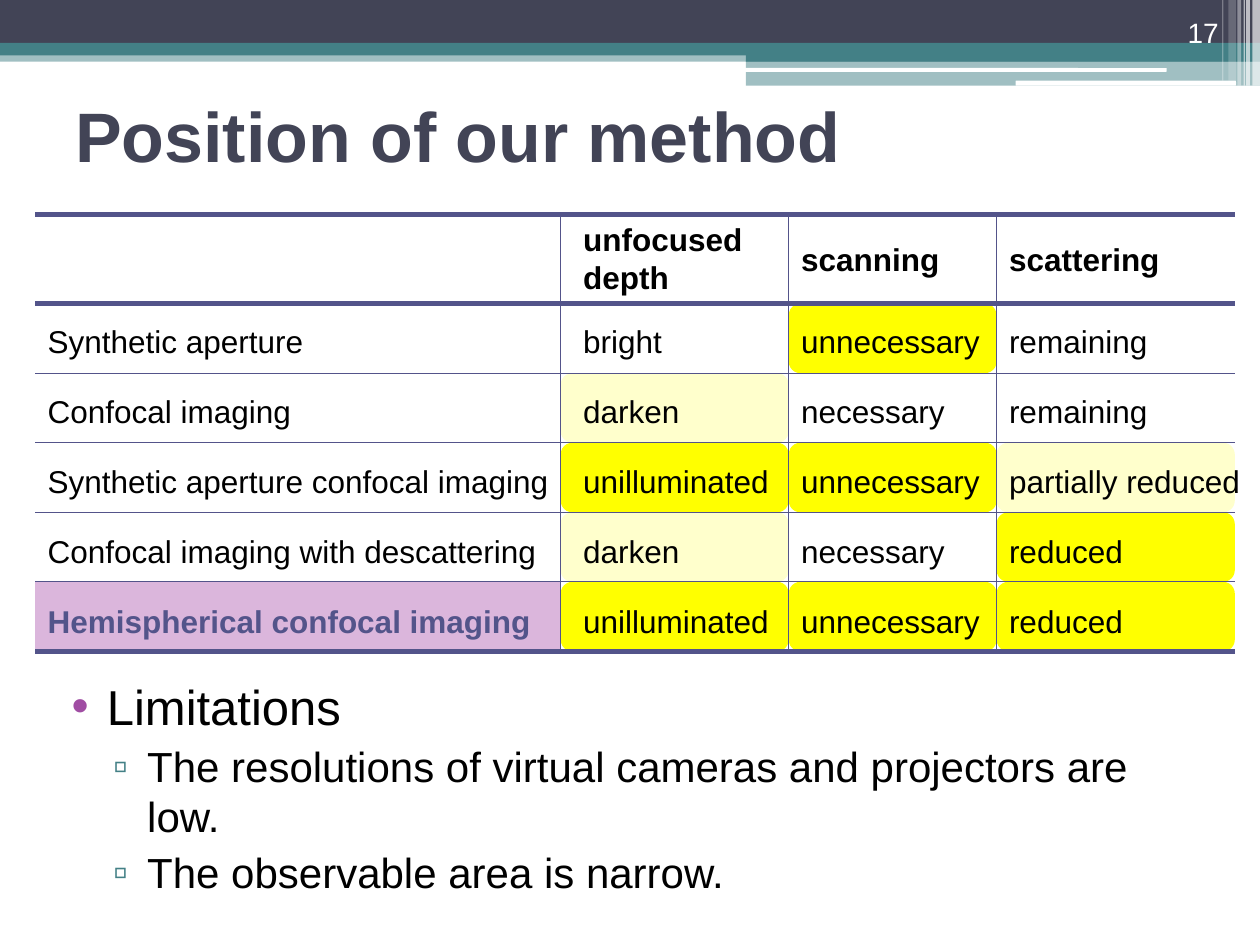
from dataclasses import dataclass

from lxml import etree
from pptx import Presentation
from pptx import util as u
from pptx.dml.color import RGBColor
from pptx.enum import shapes, text
from pptx.oxml.ns import qn

COLORS = {
    "navy": "424456", "teal": "438086", "white": "FFFFFF", "black": "000000",
    "rule": "53548A", "lilac": "DBB6DC", "best": "FFFF00", "partial": "FFFFCC",
    "bullet": "A04DA3",
}
RECT = shapes.MSO_SHAPE.RECTANGLE
ROUND = shapes.MSO_SHAPE.ROUNDED_RECTANGLE
COLS = [0.28, 4.45, 6.26, 7.91, 9.8]
HEAD_TOP, BODY_TOP, BOTTOM = 1.7, 2.41, 5.17
ROW_COUNT = 5
ROW_H = (BOTTOM - BODY_TOP) / ROW_COUNT
ROWS = [BODY_TOP + ROW_H * i for i in range(ROW_COUNT + 1)]


@dataclass
class Block:
    left: float
    top: float
    width: float
    height: float
    color: str
    alpha: int = 100
    kind: int = RECT


@dataclass
class Column:
    left: float
    width: float
    head: list[str]
    head_top: float
    cells: list[str]


@dataclass
class Bullet:
    words: str
    size: int
    char: str
    color: str
    level: int
    margin: float
    hang: float


BANNER = [
    Block(0, 0.4, 10, 0.09, "teal", 50),
    Block(0, 0, 10, 0.34, "navy"),
    Block(0, 0.34, 10, 0.1, "teal"),
    Block(5.92, 0.39, 4.08, 0.1, "teal"),
    Block(5.92, 0.48, 4.08, 0.2, "teal", 50),
    Block(5.91, 0.54, 3.35, 0.03, "white", kind=ROUND),
    Block(8.06, 0.64, 1.75, 0.04, "white", kind=ROUND),
    Block(9.94, 0, 0.06, 0.68, "white", 65),
    Block(9.89, 0, 0.03, 0.68, "white", 65),
    Block(9.87, 0, 0.01, 0.68, "white", 60),
    Block(9.82, 0, 0.03, 0.68, "white", 40),
    Block(9.75, 0, 0.06, 0.64, "white", 20),
    Block(9.7, 0, 0.01, 0.64, "white", 30),
]
COLUMNS = [
    Column(0.28, 4.21, [], 0, [
        "Synthetic aperture", "Confocal imaging", "Synthetic aperture confocal imaging",
        "Confocal imaging with descattering", "Hemispherical confocal imaging"]),
    Column(4.53, 1.69, ["unfocused", "depth"], 1.7,
           ["bright", "darken", "unilluminated", "darken", "unilluminated"]),
    Column(6.26, 1.63, ["scanning"], 1.86,
           ["unnecessary", "necessary", "unnecessary", "necessary", "unnecessary"]),
    Column(7.91, 2.05, ["scattering"], 1.86,
           ["remaining", "remaining", "partially reduced", "reduced", "reduced"]),
]
RATINGS = {
    "unilluminated": "best", "unnecessary": "best", "reduced": "best",
    "darken": "partial", "partially reduced": "partial",
}
LIMITS = [
    Bullet("Limitations", 28, "•", "bullet", 0, 0.4, 0.28),
    Bullet("The resolutions of virtual cameras and projectors are low.",
           24, "▫", "teal", 1, 0.72, 0.27),
    Bullet("The observable area is narrow.", 24, "▫", "teal", 1, 0.72, 0.27),
]


def rgb(name: str) -> RGBColor:
    """Look up a named colour."""
    return RGBColor.from_string(COLORS[name])


def add_block(s, b: Block) -> None:
    """Draw a filled shape without outline."""
    sp = s.shapes.add_shape(b.kind, *map(u.Inches, (b.left, b.top, b.width, b.height)))
    sp.shadow.inherit = False
    sp.fill.solid()
    sp.fill.fore_color.rgb = rgb(b.color)
    sp.line.fill.background()
    if b.alpha < 100:
        clr = sp._element.spPr.find(qn("a:solidFill"))[0]
        etree.SubElement(clr, qn("a:alpha"), val=str(b.alpha * 1000))


def add_rule(s, x1: float, y1: float, x2: float, y2: float, weight: float) -> None:
    """Draw a straight table rule."""
    ln = s.shapes.add_connector(shapes.MSO_CONNECTOR.STRAIGHT,
                                *map(u.Inches, (x1, y1, x2, y2)))
    ln.line.color.rgb = rgb("rule")
    ln.line.width = u.Pt(weight)
    etree.SubElement(ln._element.spPr, qn("a:effectLst"))


def style(p, size: int, color: str = "black", bold: bool = False) -> None:
    """Format every run of a paragraph."""
    for r in p.runs:
        r.font.name = "Arial"
        r.font.size = u.Pt(size)
        r.font.bold = bold
        r.font.color.rgb = rgb(color)


def add_text(s, box: tuple, lines: list[str], size: int, color: str = "black",
             bold: bool = False, wrap: bool = False,
             anchor=text.MSO_ANCHOR.TOP):
    """Add a text box with one paragraph per line and return its frame."""
    tf = s.shapes.add_textbox(*map(u.Inches, box)).text_frame
    tf.word_wrap = wrap
    tf.vertical_anchor = anchor
    tf.text = "\n".join(lines)
    for p in tf.paragraphs:
        style(p, size, color, bold)
    return tf


def add_column(s, c: Column) -> None:
    """Write the heading and the cells of one column."""
    tf = add_text(s, (c.left, 2.25, c.width, 2.82), c.cells, 18)
    for p in tf.paragraphs:
        p.line_spacing = u.Pt(40)
    if c.head:
        add_text(s, (c.left, c.head_top, c.width, 0.1 + 0.3 * len(c.head)),
                 c.head, 18, bold=True)
    else:
        style(tf.paragraphs[-1], 18, "rule", True)


def add_limits(s) -> None:
    """Write the bulleted limitations."""
    tf = add_text(s, (0.35, 5.32, 9.29, 1.03), [b.words for b in LIMITS], 24, wrap=True)
    for i, (p, b) in enumerate(zip(tf.paragraphs, LIMITS)):
        p.level = b.level
        p.space_before = u.Pt(3 if i else 0)
        pPr = p._p.get_or_add_pPr()
        pPr.set("marL", str(u.Inches(b.margin)))
        pPr.set("indent", str(-u.Inches(b.hang)))
        clr = etree.SubElement(pPr, qn("a:buClr"))
        etree.SubElement(clr, qn("a:srgbClr"), val=COLORS[b.color])
        etree.SubElement(pPr, qn("a:buFont"), typeface="Arial")
        etree.SubElement(pPr, qn("a:buChar"), char=b.char)
        style(p, b.size)


def main() -> None:
    """Build the slide and save it."""
    prs = Presentation()
    prs.slide_width, prs.slide_height = u.Inches(10), u.Inches(7.5)
    s = prs.slides.add_slide(prs.slide_layouts[6])
    for b in BANNER:
        add_block(s, b)
    add_text(s, (0.5, 0.68, 9, 0.77), ["Position of our method"], 40, "navy", True,
             True, text.MSO_ANCHOR.MIDDLE)
    tf = add_text(s, (8.94, 0.08, 0.83, 0.36), ["17"], 16, "white", wrap=True,
                  anchor=text.MSO_ANCHOR.BOTTOM)
    tf.paragraphs[0].alignment = text.PP_ALIGN.RIGHT

    add_block(s, Block(COLS[0], ROWS[-2], COLS[1] - COLS[0], ROW_H, "lilac"))
    for c, left, right in zip(COLUMNS, COLS, COLS[1:]):
        for cell, top in zip(c.cells, ROWS):
            if cell in RATINGS:
                add_block(s, Block(left, top, right - left, ROW_H, RATINGS[cell], kind=ROUND))
    for c in COLUMNS:
        add_column(s, c)
    for x in COLS[1:-1]:
        add_rule(s, x, HEAD_TOP, x, BOTTOM, 0.75)
    for y in [HEAD_TOP, *ROWS]:
        add_rule(s, COLS[0], y, COLS[-1], y, 3 if y in (HEAD_TOP, ROWS[0], ROWS[-1]) else 0.75)
    add_limits(s)
    prs.save("out.pptx")


if __name__ == "__main__":
    main()
